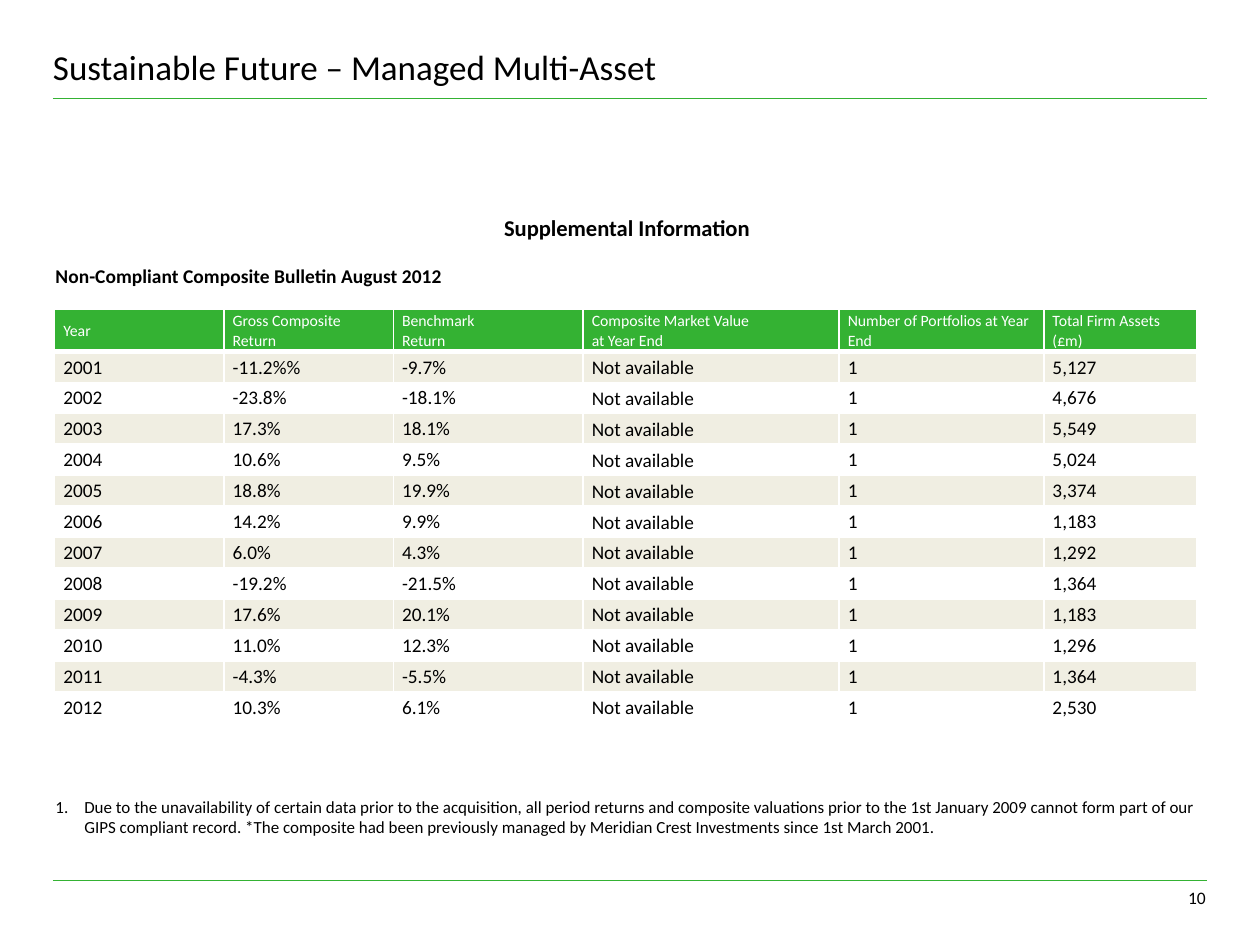
from lxml import etree
from pptx import Presentation
from pptx.dml.color import RGBColor
from pptx.enum import shapes, text
from pptx.oxml.ns import qn
from pptx.util import Pt

# Content
TITLE = "Sustainable Future – Managed Multi-Asset"
PAGE_NUMBER = "10"
HEADING = "Supplemental Information"
SUBHEADING = "Non-Compliant Composite Bulletin August 2012"
FOOTNOTE = (
    "Due to the unavailability of certain data prior to the acquisition, all period "
    "returns and composite valuations prior to the 1st January 2009 cannot form part "
    "of our GIPS compliant record. *The composite had been previously managed by "
    "Meridian Crest Investments since 1st March 2001."
)
HEADERS = ["Year", "Gross Composite\nReturn", "Benchmark\nReturn",
           "Composite Market Value\nat Year End",
           "Number of Portfolios at Year End", "Total Firm Assets (£m)"]
RETURNS = [  # year, gross return, benchmark return, firm assets
    ("2001", "-11.2%%", "-9.7%", "5,127"),
    ("2002", "-23.8%", "-18.1%", "4,676"),
    ("2003", "17.3%", "18.1%", "5,549"),
    ("2004", "10.6%", "9.5%", "5,024"),
    ("2005", "18.8%", "19.9%", "3,374"),
    ("2006", "14.2%", "9.9%", "1,183"),
    ("2007", "6.0%", "4.3%", "1,292"),
    ("2008", "-19.2%", "-21.5%", "1,364"),
    ("2009", "17.6%", "20.1%", "1,183"),
    ("2010", "11.0%", "12.3%", "1,296"),
    ("2011", "-4.3%", "-5.5%", "1,364"),
    ("2012", "10.3%", "6.1%", "2,530"),
]
MARKET_VALUE, PORTFOLIOS = "Not available", "1"
VALUE_COLUMN = 3

COLORS = {"green": "34B233", "band": "F0EEE2", "white": "FFFFFF", "black": "000000"}
FONT = "Calibri"
COLUMN_WIDTHS = [96.8, 96.8, 108.4, 146.3, 117, 87.7]
HEADER_HEIGHT, ROW_HEIGHT = 23.76, 17.7
RULE_LEFT, RULE_RIGHT = 30.25, 689.75

deck = Presentation()
deck.slide_width, deck.slide_height = Pt(720), Pt(540)
page = deck.slides.add_slide(deck.slide_layouts[6])


def rgb(name):
    return RGBColor.from_string(COLORS[name])


def apply(target, **values):
    for name, value in values.items():
        setattr(target, name, value)


def write(para, words, size, color="black", bold=False, **layout):
    para.text = words
    apply(para, **layout)
    for span in para.runs:
        apply(span.font, name=FONT, size=Pt(size), bold=bold)
        span.font.color.rgb = rgb(color)
    for line_break in para._p.findall(qn("a:br")):
        etree.SubElement(line_break, qn("a:rPr"), sz=str(int(size * 100)))


def add_box(left, top, width, height, insets, anchor):
    box = page.shapes.add_textbox(Pt(left), Pt(top), Pt(width), Pt(height))
    sides = ("margin_left", "margin_top", "margin_right", "margin_bottom")
    apply(box.text_frame, word_wrap=True, vertical_anchor=anchor,
          **{side: Pt(inset) for side, inset in zip(sides, insets)})
    return box.text_frame


def set_borders(cell, bottom):
    props = cell._tc.get_or_add_tcPr()
    for index, (side, width) in enumerate(
            [("lnL", 1), ("lnR", 1), ("lnT", 1), ("lnB", bottom)]):
        line = etree.Element(qn(f"a:{side}"), w=str(Pt(width)))
        fill = etree.SubElement(line, qn("a:solidFill"))
        etree.SubElement(fill, qn("a:srgbClr"), val=COLORS["white"])
        props.insert(index, line)


# Rules under the title and above the page number
for y in (56.25, 503.25):
    rule = page.shapes.add_connector(
        shapes.MSO_CONNECTOR.STRAIGHT, Pt(RULE_LEFT), Pt(y), Pt(RULE_RIGHT), Pt(y))
    rule.line.color.rgb = rgb("green")
    rule.line.width = Pt(0.5)
    etree.SubElement(rule._element.spPr, qn("a:effectLst"))

# Title and page number
frame = add_box(RULE_LEFT, 23, 548.6, 33, (0, 5.76, 0, 5.76), text.MSO_ANCHOR.BOTTOM)
write(frame.paragraphs[0], TITLE, 20, line_spacing=0.9)
frame = add_box(525.6, 503.3, 163.4, 18.7, (7.2, 3.6, 0, 3.6), text.MSO_ANCHOR.MIDDLE)
write(frame.paragraphs[0], PAGE_NUMBER, 10, alignment=text.PP_ALIGN.RIGHT)

# Headings and numbered footnote, with room for the table between them
frame = add_box(28.8, 119.5, 658.8, 365, (2.88,) * 4, text.MSO_ANCHOR.TOP)
write(frame.paragraphs[0], HEADING, 12.9, bold=True, alignment=text.PP_ALIGN.CENTER)
write(frame.add_paragraph(), SUBHEADING, 11.1, bold=True, space_before=Pt(13))
note = frame.add_paragraph()
write(note, FOOTNOTE, 9.7, space_before=Pt(291))
note_props = note._p.get_or_add_pPr()
note_props.set("marL", str(Pt(16.5)))
note_props.set("indent", str(Pt(-16.5)))
etree.SubElement(note_props, qn("a:buFont"), typeface=FONT)
etree.SubElement(note_props, qn("a:buAutoNum"), type="arabicPeriod")

# Table of returns
rows = [HEADERS] + [(year, gross, benchmark, MARKET_VALUE, PORTFOLIOS, assets)
                    for year, gross, benchmark, assets in RETURNS]
heights = [HEADER_HEIGHT] + [ROW_HEIGHT] * len(RETURNS)
table = page.shapes.add_table(
    len(rows), len(HEADERS), Pt(31.2), Pt(177), Pt(sum(COLUMN_WIDTHS)),
    Pt(sum(heights))).table
apply(table, first_row=False, horz_banding=False)
for column, width in zip(table.columns, COLUMN_WIDTHS):
    column.width = Pt(width)
for r, (words_in_row, height) in enumerate(zip(rows, heights)):
    table.rows[r].height = Pt(height)
    is_header = r == 0
    fill = "green" if is_header else "band" if r % 2 else "white"
    for c, words in enumerate(words_in_row):
        cell = table.cell(r, c)
        centred = is_header or c == VALUE_COLUMN
        apply(cell, margin_left=Pt(5), margin_right=Pt(5), margin_top=0, margin_bottom=0,
              vertical_anchor=text.MSO_ANCHOR.MIDDLE if centred else text.MSO_ANCHOR.TOP)
        cell.fill.solid()
        cell.fill.fore_color.rgb = rgb(fill)
        set_borders(cell, bottom=3 if is_header else 1)
        write(cell.text_frame.paragraphs[0], words, 9 if is_header else 11,
              "white" if is_header else "black",
              line_spacing=1.07 if centred else Pt(16),
              space_after=Pt(0 if is_header else 8))

deck.save("out.pptx")
